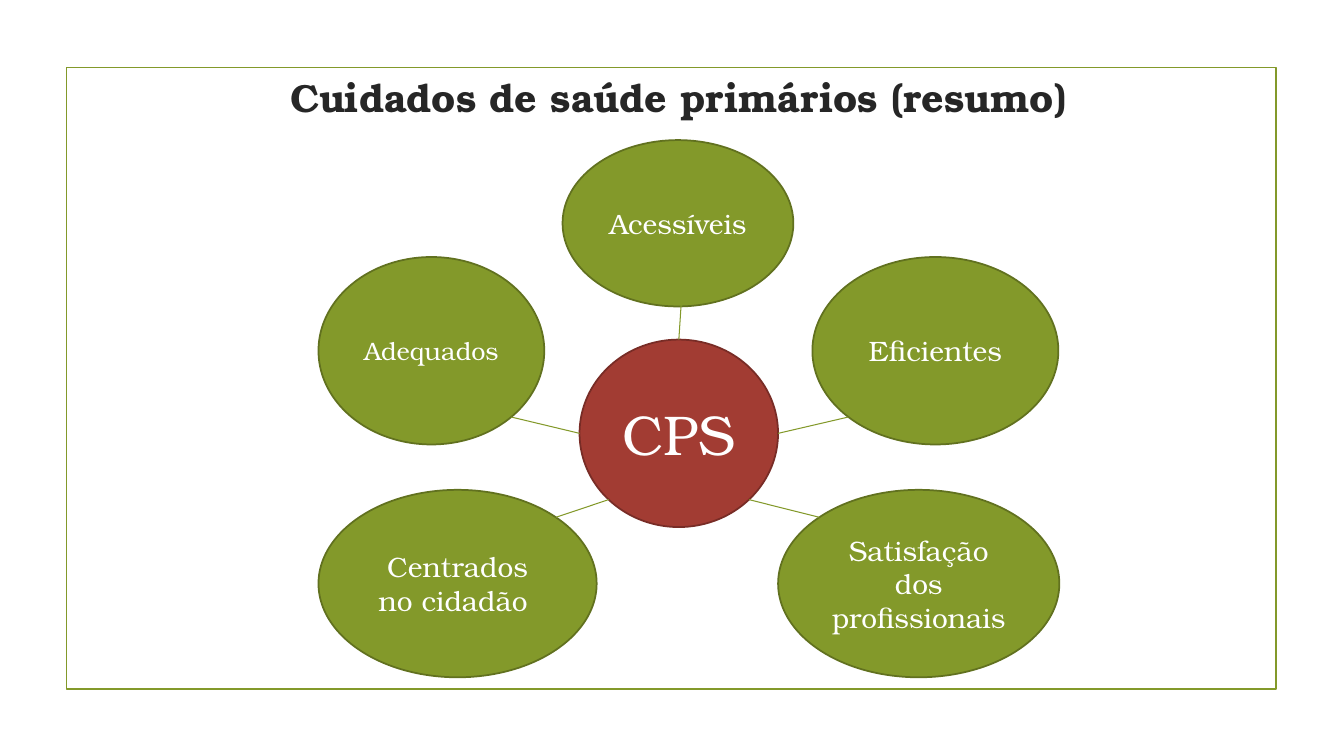
from dataclasses import dataclass
from math import sqrt

from lxml import etree
from pptx import Presentation
from pptx.dml.color import RGBColor
from pptx.enum import shapes, text
from pptx.oxml import ns
from pptx.util import Pt

# Content: boxes are (left, top, width, height) in points
TITLE = "Cuidados de saúde primários (resumo)"
TITLE_BOX = (193, 49, 583.2, 33.8)
FRAME_BOX = (47.5, 48.2, 864, 444.2)
HUB = ("CPS", (414, 242.6, 141.8, 133.9))

# Spoke ends are offsets from an ellipse's centre, in half widths and half heights
D = 1 / sqrt(2)
QUALITIES = [
    # label, box, spoke end on the quality, spoke end on the hub
    ("Centrados no cidadão ", (227.5, 349.9, 198.7, 133.9), (D, -D), (-D, D)),
    ("Acessíveis", (401.8, 100.1, 164.9, 118.8), (0.03, 0.93), (0, -1)),
    ("Adequados", (227.5, 183.6, 161.3, 133.9), (D, D), (-1, 0)),
    ("Eficientes", (580.3, 183.6, 175.7, 133.9), (-D, D), (1, 0)),
    ("Satisfação dos profissionais ", (555.8, 349.9, 200.9, 133.9), (-D, -D), (D, D)),
]


@dataclass(frozen=True)
class Theme:
    font: str = "TeX Gyre Bonum"
    green: str = "83992A"
    dark_green: str = "61711F"
    red: str = "A23C33"
    dark_red: str = "782C26"
    ink: str = "262626"
    white: str = "FFFFFF"
    title_size: float = 28
    hub_size: float = 40
    label_size: float = 20
    small_size: float = 18
    outline: float = 1.25
    spoke: float = 0.75


THEME = Theme()


def write(shape, words, size, color, bold=False, anchor=text.MSO_ANCHOR.MIDDLE):
    frame = shape.text_frame
    frame.word_wrap = True
    frame.auto_size = text.MSO_AUTO_SIZE.NONE
    frame.vertical_anchor = anchor
    paragraph = frame.paragraphs[0]
    paragraph.alignment = text.PP_ALIGN.CENTER
    run = paragraph.add_run()
    run.text = words
    run.font.name = THEME.font
    run.font.size = Pt(size)
    run.font.bold = bold
    run.font.color.rgb = RGBColor.from_string(color)


def add_outlined(slide, kind, box, line, fill=None):
    shape = slide.shapes.add_shape(kind, *map(Pt, box))
    shape.shadow.inherit = False
    if fill:
        shape.fill.solid()
        shape.fill.fore_color.rgb = RGBColor.from_string(fill)
    else:
        shape.fill.background()
    shape.line.color.rgb = RGBColor.from_string(line)
    shape.line.width = Pt(THEME.outline)
    return shape


def point_on(box, offset):
    left, top, width, height = box
    return left + width / 2 * (1 + offset[0]), top + height / 2 * (1 + offset[1])


def add_spoke(slide, start, end):
    connector = slide.shapes.add_connector(
        shapes.MSO_CONNECTOR.STRAIGHT, *map(Pt, (*start, *end)))
    connector.line.color.rgb = RGBColor.from_string(THEME.green)
    connector.line.width = Pt(THEME.spoke)
    etree.SubElement(connector._element.spPr, ns.qn("a:effectLst"))


def main():
    presentation = Presentation()
    presentation.slide_width, presentation.slide_height = Pt(960), Pt(540)
    slide = presentation.slides.add_slide(presentation.slide_layouts[5])

    # Frame
    add_outlined(slide, shapes.MSO_SHAPE.RECTANGLE, FRAME_BOX, THEME.green)

    # Hub and the qualities around it
    hub_label, hub_box = HUB
    hub = add_outlined(slide, shapes.MSO_SHAPE.OVAL, hub_box, THEME.dark_red, THEME.red)
    write(hub, hub_label, THEME.hub_size, THEME.white)
    for label, box, _, _ in QUALITIES:
        oval = add_outlined(slide, shapes.MSO_SHAPE.OVAL, box, THEME.dark_green, THEME.green)
        size = THEME.small_size if label == "Adequados" else THEME.label_size
        write(oval, label, size, THEME.white)

    # Spokes
    for _, box, outer, inner in QUALITIES:
        add_spoke(slide, point_on(box, outer), point_on(hub_box, inner))

    # Title
    title = slide.shapes.title
    title.left, title.top, title.width, title.height = map(Pt, TITLE_BOX)
    write(title, TITLE, THEME.title_size, THEME.ink, bold=True, anchor=text.MSO_ANCHOR.TOP)

    presentation.save("out.pptx")


if __name__ == "__main__":
    main()
